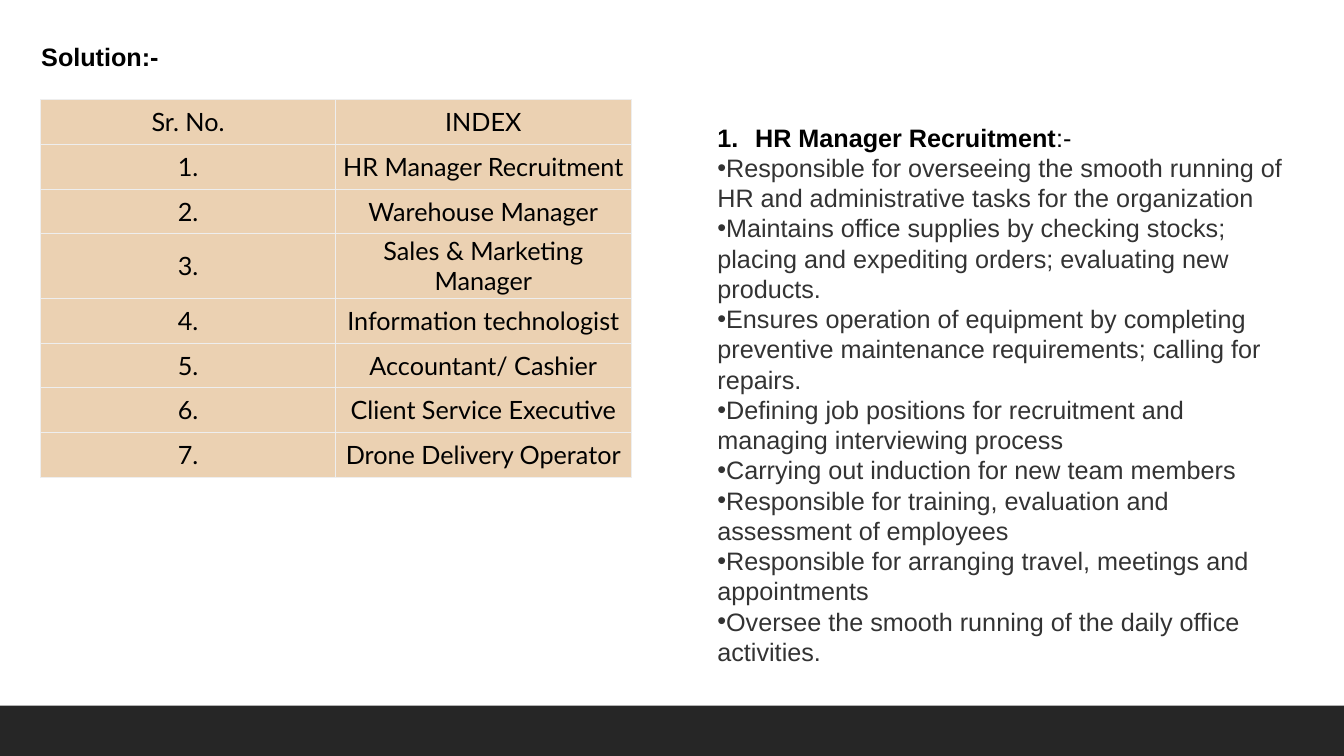
from lxml import etree
from pptx import Presentation
from pptx.dml.color import RGBColor
from pptx.enum.shapes import MSO_SHAPE
from pptx.enum.text import MSO_ANCHOR, PP_ALIGN
from pptx.oxml.ns import qn
from pptx.util import Cm, Pt

RECT = MSO_SHAPE.RECTANGLE
MIDDLE = MSO_ANCHOR.MIDDLE
CENTER = PP_ALIGN.CENTER
WIDE, HIGH = 33.87, 19.05
BLACK, GREY, DARK = "000000", "333333", "262626"
SAND, EDGE = "EBD1B2", "EEEEEE"

JOBS = [
    "HR Manager Recruitment",
    "Warehouse Manager",
    "Sales & Marketing Manager",
    "Information technologist",
    "Accountant/ Cashier",
    "Client Service Executive",
    "Drone Delivery Operator",
]
DUTIES = [
    "Responsible for overseeing the smooth running of HR and administrative tasks for the organization",
    "Maintains office supplies by checking stocks; placing and expediting orders; evaluating new products.",
    "Ensures operation of equipment by completing preventive maintenance requirements; calling for repairs.",
    "Defining job positions for recruitment and managing interviewing process",
    "Carrying out induction for new team members",
    "Responsible for training, evaluation and assessment of employees",
    "Responsible for arranging travel, meetings and appointments",
    "Oversee the smooth running of the daily office activities.",
]


def color(code):
    return RGBColor.from_string(code)


def add_run(para, text, shade=BLACK, font="Arial", bold=False):
    run = para.add_run()
    run.text = text
    run.font.name = font
    run.font.size = Pt(18)
    run.font.bold = bold
    run.font.color.rgb = color(shade)


def add_box(slide, left, top, width, height):
    box = slide.shapes.add_textbox(Cm(left), Cm(top), Cm(width), Cm(height))
    box.text_frame.word_wrap = True
    return box.text_frame


def set_bullet(para, tag, indent=0, **attrs):
    props = para._p.get_or_add_pPr()
    props.set("marL", str(Cm(indent)))
    props.set("indent", str(-Cm(indent)))
    etree.SubElement(props, qn("a:buFont"), typeface="Arial")
    etree.SubElement(props, qn(tag), **attrs)


def set_edges(cell):
    props = cell._tc.get_or_add_tcPr()
    for side in ("a:lnL", "a:lnR", "a:lnT", "a:lnB"):
        line = etree.SubElement(props, qn(side), w=str(Pt(0.6)))
        fill = etree.SubElement(line, qn("a:solidFill"))
        etree.SubElement(fill, qn("a:srgbClr"), val=EDGE)


def add_footer(slide, left, top, width, height):
    bar = slide.shapes.add_shape(RECT, Cm(left), Cm(top), Cm(width), Cm(height))
    bar.shadow.inherit = False
    bar.fill.solid()
    bar.fill.fore_color.rgb = color(DARK)
    bar.line.fill.background()


def add_title(slide, left, top, width, height):
    frame = add_box(slide, left, top, width, height)
    add_run(frame.paragraphs[0], "Solution:-", bold=True)


def add_index(slide, left, top, width, height):
    rows = [("Sr. No.", "INDEX")]
    rows += [(f"{num}.", job) for num, job in enumerate(JOBS, 1)]
    table = slide.shapes.add_table(
        len(rows), 2, Cm(left), Cm(top), Cm(width), Cm(height)).table
    for row, texts in zip(table.rows, rows):
        for cell, text in zip(row.cells, texts):
            cell.margin_left = cell.margin_right = Cm(0.05)
            cell.margin_top = cell.margin_bottom = Cm(0.05)
            cell.vertical_anchor = MIDDLE
            set_edges(cell)
            cell.fill.solid()
            cell.fill.fore_color.rgb = color(SAND)
            para = cell.text_frame.paragraphs[0]
            para.alignment = CENTER
            add_run(para, text, font="Lato")


def add_duties(slide, left, top, width, height):
    frame = add_box(slide, left, top, width, height)
    head = frame.paragraphs[0]
    head.line_spacing = Pt(21.6)
    set_bullet(head, "a:buAutoNum", 0.95, type="arabicPeriod")
    add_run(head, JOBS[0], bold=True)
    add_run(head, ":-")
    for duty in DUTIES:
        para = frame.add_paragraph()
        para.line_spacing = Pt(21.6)
        set_bullet(para, "a:buChar", char="•")
        add_run(para, duty, GREY)


def main():
    deck = Presentation()
    deck.slide_width, deck.slide_height = Cm(WIDE), Cm(HIGH)
    slide = deck.slides.add_slide(deck.slide_layouts[6])
    add_footer(slide, 0, HIGH - 1.27, WIDE, 1.27)
    add_title(slide, 0.79, 0.91, 7.19, 1.8)
    add_index(slide, 1.02, 2.51, 14.88, 9.02)
    add_duties(slide, 17.83, 2.95, 15.04, 14.1)
    deck.save("out.pptx")


if __name__ == "__main__":
    main()
